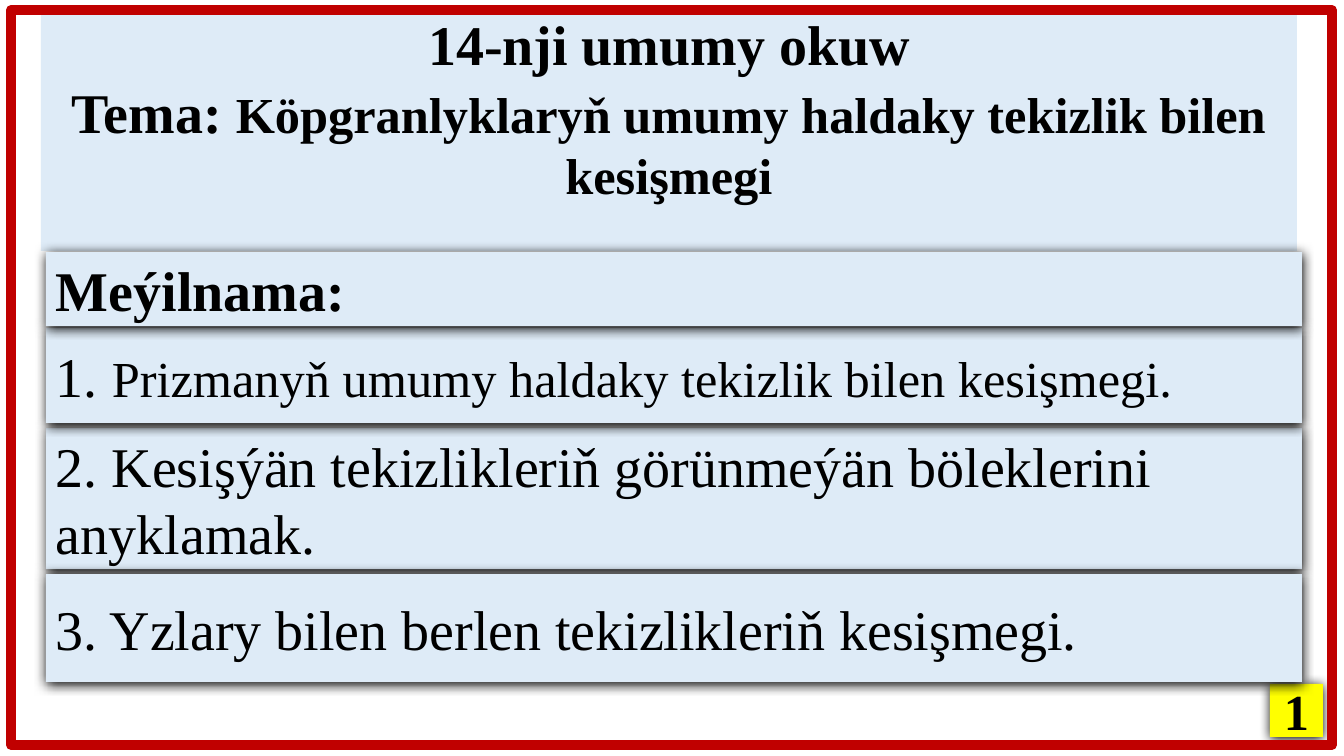
from lxml.etree import SubElement
from pptx import Presentation
from pptx.dml.color import RGBColor
from pptx.enum.shapes import MSO_SHAPE
from pptx.enum.text import MSO_ANCHOR, MSO_AUTO_SIZE, PP_ALIGN
from pptx.oxml.ns import qn
from pptx.util import Pt

PX = 12192000 / 1344
PALE_BLUE = RGBColor(0xDE, 0xEB, 0xF7)
YELLOW = RGBColor(0xFF, 0xFF, 0x00)
DARK_RED = RGBColor(0xC0, 0x00, 0x00)
BLACK = RGBColor(0x00, 0x00, 0x00)


def write(frame, paragraphs, align, bold):
    """Fill a text frame with paragraphs, each a list of (text, points) runs."""
    frame.word_wrap = True
    frame.auto_size = MSO_AUTO_SIZE.NONE
    for index, runs in enumerate(paragraphs):
        paragraph = frame.add_paragraph() if index else frame.paragraphs[0]
        paragraph.alignment = align
        for text, points in runs:
            run = paragraph.add_run()
            run.text = text
            font_format = {"name": "Times New Roman", "size": Pt(points), "bold": bold}
            for attribute, value in font_format.items():
                setattr(run.font, attribute, value)
            run.font.color.rgb = BLACK


def add_panel(slide, preset, box, color):
    """Add a borderless filled shape with a soft shadow below it."""
    panel = slide.shapes.add_shape(preset, *(round(v * PX) for v in box))
    panel.fill.solid()
    panel.fill.fore_color.rgb = color
    panel.line.fill.background()
    panel.shadow.inherit = False
    effects = panel.element.spPr.find(qn("a:effectLst"))
    shadow = SubElement(effects, qn("a:outerShdw"), blurRad=str(Pt(8.5)),
                        dist=str(Pt(1)), dir="5400000", algn="t", rotWithShape="0")
    SubElement(shadow, qn("a:srgbClr"), val=str(BLACK))
    panel.text_frame.vertical_anchor = MSO_ANCHOR.MIDDLE
    return panel


prs = Presentation()
prs.slide_width = round(1344 * PX)
prs.slide_height = round(756 * PX)
slide = prs.slides.add_slide(prs.slide_layouts[5])

page_number = add_panel(slide, MSO_SHAPE.RECTANGLE, (1270, 684, 53, 53), YELLOW)
write(page_number.text_frame, [[("1", 36)]], PP_ALIGN.CENTER, True)

lesson_title = slide.shapes.title
title_box = {"left": 41, "top": 10, "width": 1256, "height": 241}
for attribute, value in title_box.items():
    setattr(lesson_title, attribute, round(value * PX))
lesson_title.fill.solid()
lesson_title.fill.fore_color.rgb = PALE_BLUE
lesson_title.text_frame.vertical_anchor = MSO_ANCHOR.TOP
lesson_title.text_frame.margin_top = 0
write(lesson_title.text_frame, [
    [("14-nji umumy okuw", 40)],
    [("Tema: ", 40), ("Köpgranlyklaryň umumy haldaky tekizlik bilen kesişmegi", 36)],
], PP_ALIGN.CENTER, True)

# Top, height, bold and runs of each plan row, from back to front
plan_rows = [
    (428, 141, False, [("2. Kesişýän tekizlikleriň görünmeýän böleklerini anyklamak.", 40)]),
    (328, 95, False, [("1. ", 40), ("Prizmanyň umumy haldaky tekizlik bilen kesişmegi.", 36)]),
    (252, 74, True, [("Meýilnama:", 40)]),
    (574, 108, False, [("3. Yzlary bilen berlen tekizlikleriň kesişmegi.", 40)]),
]
for top, height, bold, runs in plan_rows:
    plan_row = add_panel(slide, MSO_SHAPE.PENTAGON, (46, top, 1256, height), PALE_BLUE)
    plan_row.adjustments[0] = 0
    write(plan_row.text_frame, [runs], PP_ALIGN.LEFT, bold)

border = slide.shapes.add_shape(
    MSO_SHAPE.RECTANGLE, *(round(v * PX) for v in (11, 10, 1321, 735)))
border.fill.background()
border.line.color.rgb = DARK_RED
border.line.width = Pt(7)
border.shadow.inherit = False

prs.save("out.pptx")
